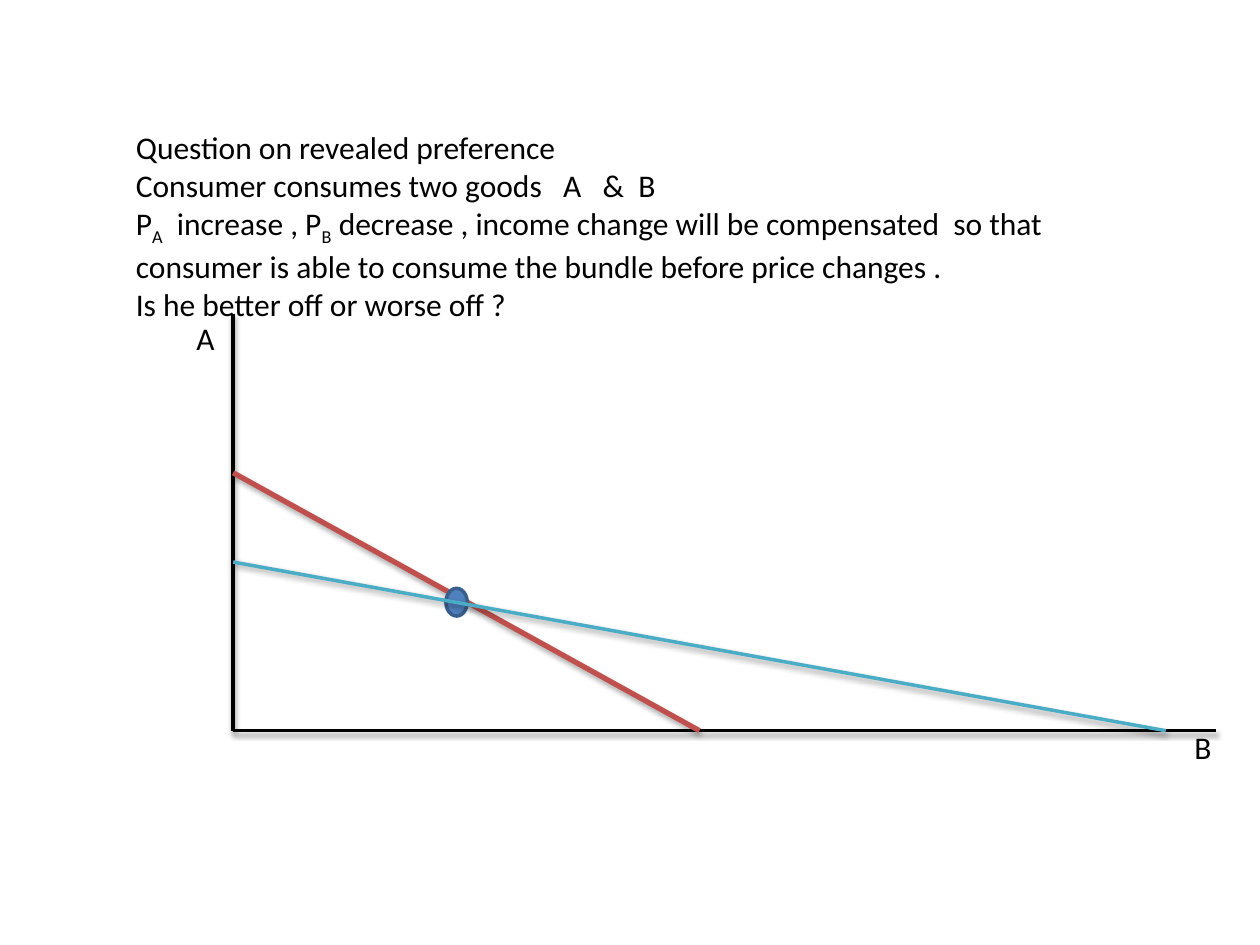
from dataclasses import dataclass

from lxml import etree
from pptx import Presentation
from pptx.dml.color import RGBColor
from pptx.enum.shapes import MSO_CONNECTOR, MSO_SHAPE
from pptx.enum.text import MSO_AUTO_SIZE
from pptx.oxml.ns import qn
from pptx.util import Cm, Pt

STRAIGHT = MSO_CONNECTOR.STRAIGHT
OVAL = MSO_SHAPE.OVAL
FIT_TEXT = MSO_AUTO_SIZE.SHAPE_TO_FIT_TEXT


@dataclass(frozen=True)
class Theme:
    font: str = "Calibri"
    text_size: int = 18
    ink: str = "000000"
    old_budget: str = "C0504D"
    new_budget: str = "4BACC6"
    bundle_fill: str = "4F81BD"
    bundle_line: str = "3A5F8C"
    thin: int = 2
    thick: int = 3


class SlideBuilder:
    def __init__(self, slide, theme):
        self.shapes = slide.shapes
        self.theme = theme

    def text(self, left, top, width, height, paragraphs):
        """Each paragraph is a list of strings; every second one is a subscript."""
        box = self.shapes.add_textbox(Cm(left), Cm(top), Cm(width), Cm(height))
        frame = box.text_frame
        frame.word_wrap = True
        frame.auto_size = FIT_TEXT
        for index, spans in enumerate(paragraphs):
            para = frame.add_paragraph() if index else frame.paragraphs[0]
            para.font.name = self.theme.font
            para.font.size = Pt(self.theme.text_size)
            para.font.color.rgb = RGBColor.from_string(self.theme.ink)
            for position, words in enumerate(spans):
                span = para.add_run()
                span.text = words
                if position % 2:
                    span._r.get_or_add_rPr().set("baseline", "-25000")

    def line(self, start, end, color, width, distance=1.6, opacity=38):
        line = self.shapes.add_connector(STRAIGHT, *map(Cm, start + end))
        line.line.color.rgb = RGBColor.from_string(color)
        line.line.width = Pt(width)
        # Soft shadow falling straight down
        effects = etree.SubElement(line._element.spPr, qn("a:effectLst"))
        shadow = etree.SubElement(
            effects, qn("a:outerShdw"), blurRad=str(Pt(3.1)),
            dist=str(Pt(distance)), dir="5400000", rotWithShape="0")
        shade = etree.SubElement(shadow, qn("a:srgbClr"), val=self.theme.ink)
        etree.SubElement(shade, qn("a:alpha"), val=str(opacity * 1000))

    def dot(self, left, top, width, height):
        dot = self.shapes.add_shape(OVAL, Cm(left), Cm(top), Cm(width), Cm(height))
        dot.shadow.inherit = False
        dot.fill.solid()
        dot.fill.fore_color.rgb = RGBColor.from_string(self.theme.bundle_fill)
        dot.line.color.rgb = RGBColor.from_string(self.theme.bundle_line)
        dot.line.width = Pt(self.theme.thin)


def main():
    deck = Presentation()
    deck.slide_width, deck.slide_height = Cm(25.4), Cm(19.05)
    theme = Theme()
    page = SlideBuilder(deck.slides.add_slide(deck.slide_layouts[6]), theme)

    # Question
    page.text(2.49, 2.46, 20.6, 14.1, [
        ["Question on revealed preference"],
        ["Consumer consumes two goods   A   &  B"],
        ["P", "A", "  increase , P", "B",
         " decrease , income change will be compensated  so that "
         "consumer is able to consume the bundle before price changes ."],
        ["Is he better off or worse off ?"],
    ])

    # Axes and their labels
    axis_x, axis_y = 4.7, 14.73
    origin = (axis_x, axis_y)
    page.line((axis_x, 6.32), origin, theme.ink, theme.thin)
    page.line(origin, (24.51, axis_y), theme.ink, theme.thin)
    page.text(3.71, 6.3, 2.59, 1.02, [["A"]])
    page.text(23.83, 14.55, 1.57, 1.02, [["B"]])

    # Budget lines, crossing at the original bundle
    page.line((axis_x, 9.53), (14.1, axis_y), theme.old_budget, theme.thick,
              distance=1.8, opacity=35)
    page.dot(8.99, 11.86, 0.43, 0.56)
    page.line((axis_x, 11.33), (23.5, axis_y), theme.new_budget, theme.thin)

    deck.save("out.pptx")


if __name__ == "__main__":
    main()
